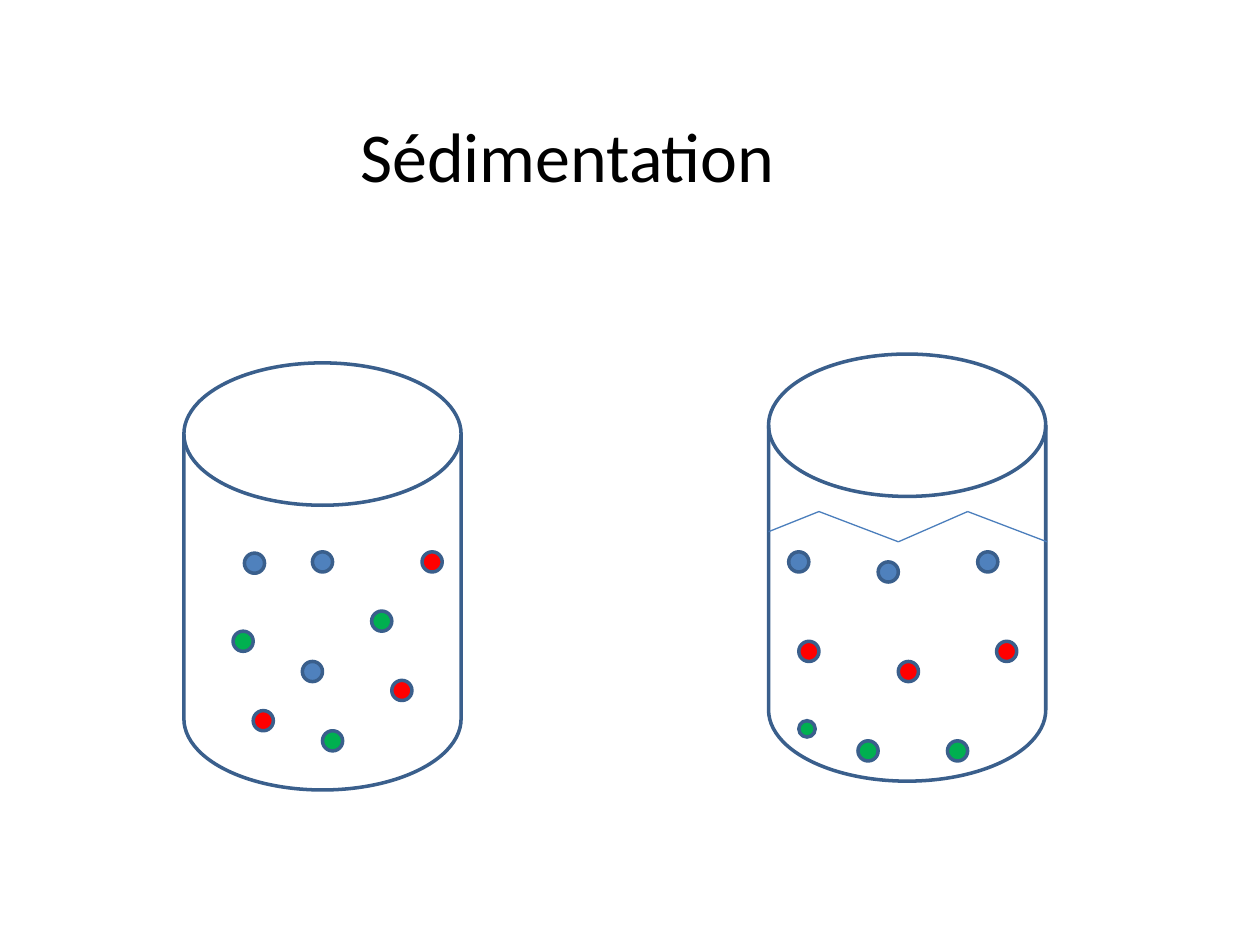
import itertools

import pptx
import pptx.dml.color
import pptx.enum.shapes
import pptx.oxml.ns
import pptx.util
from lxml import etree

SHAPE = pptx.enum.shapes.MSO_SHAPE
INCH = pptx.util.Inches
WIDTH, HEIGHT = 10, 7.5
OUTLINE, SURFACE = "3A5F8C", "4B7EBC"
BLUE, RED, GREEN = "4F81BD", "FF0000", "00B050"
GRAIN = 0.16

# Grain positions (left, top) in inches, by colour
MIXED = {
    BLUE: [(1.94, 4.39), (2.48, 4.38), (2.4, 5.25)],
    RED: [(3.35, 4.38), (3.11, 5.4), (2.01, 5.64)],
    GREEN: [(2.95, 4.85), (1.85, 5.01), (2.56, 5.8)],
}
SETTLED = {
    BLUE: [(6.26, 4.38), (6.97, 4.46), (7.76, 4.38)],
    RED: [(6.34, 5.09), (7.13, 5.25), (7.91, 5.09)],
    GREEN: [(6.81, 5.88), (7.52, 5.88)],
}
WAVE = [(6.1, 4.22), (6.5, 4.06), (7.13, 4.3), (7.68, 4.06), (8.31, 4.3)]


def rgb(value):
    return pptx.dml.color.RGBColor.from_string(value)


def add_title(s, text):
    left = 0.276 * WIDTH
    box = s.shapes.add_textbox(INCH(left), INCH(0.112 * HEIGHT),
                               INCH(WIDTH - left), INCH(0.77))
    tf = box.text_frame
    tf.word_wrap = True
    r = tf.paragraphs[0].add_run()
    r.text = text
    r.font.name = "Calibri"
    r.font.size = pptx.util.Pt(40)
    r.font.color.rgb = rgb("000000")


def add_outlined(s, kind, left, top, width, height, fill):
    sp = s.shapes.add_shape(kind, INCH(left), INCH(top), INCH(width), INCH(height))
    sp.shadow.inherit = False
    sp.fill.solid()
    sp.fill.fore_color.rgb = rgb(fill)
    sp.line.color.rgb = rgb(OUTLINE)
    sp.line.width = pptx.util.Pt(2)


def add_beaker(s, left, top):
    add_outlined(s, SHAPE.FLOWCHART_MAGNETIC_DISK, left, top, 2.2, 3.39, "FFFFFF")


def add_grain(s, left, top, fill, size=GRAIN):
    add_outlined(s, SHAPE.OVAL, left, top, size, size, fill)


def add_grains(s, groups):
    for fill, places in groups.items():
        for left, top in places:
            add_grain(s, left, top, fill)


def add_wave(s, points):
    """Join the points with thin lines to show the water surface."""
    for start, end in itertools.pairwise(points):
        line = s.shapes.add_connector(pptx.enum.shapes.MSO_CONNECTOR.STRAIGHT,
                                      *map(INCH, start + end))
        line.line.color.rgb = rgb(SURFACE)
        line.line.width = pptx.util.Pt(0.75)
        etree.SubElement(line._element.spPr, pptx.oxml.ns.qn("a:effectLst"))


def main():
    prs = pptx.Presentation()
    prs.slide_width, prs.slide_height = INCH(WIDTH), INCH(HEIGHT)
    s = prs.slides.add_slide(prs.slide_layouts[6])
    add_title(s, "Sédimentation")
    add_beaker(s, 1.46, 2.88)
    add_beaker(s, 6.1, 2.81)
    add_grains(s, MIXED)
    add_wave(s, WAVE)
    add_grains(s, SETTLED)
    add_grain(s, 6.34, 5.72, GREEN, size=0.13)
    prs.save("out.pptx")


if __name__ == "__main__":
    main()
